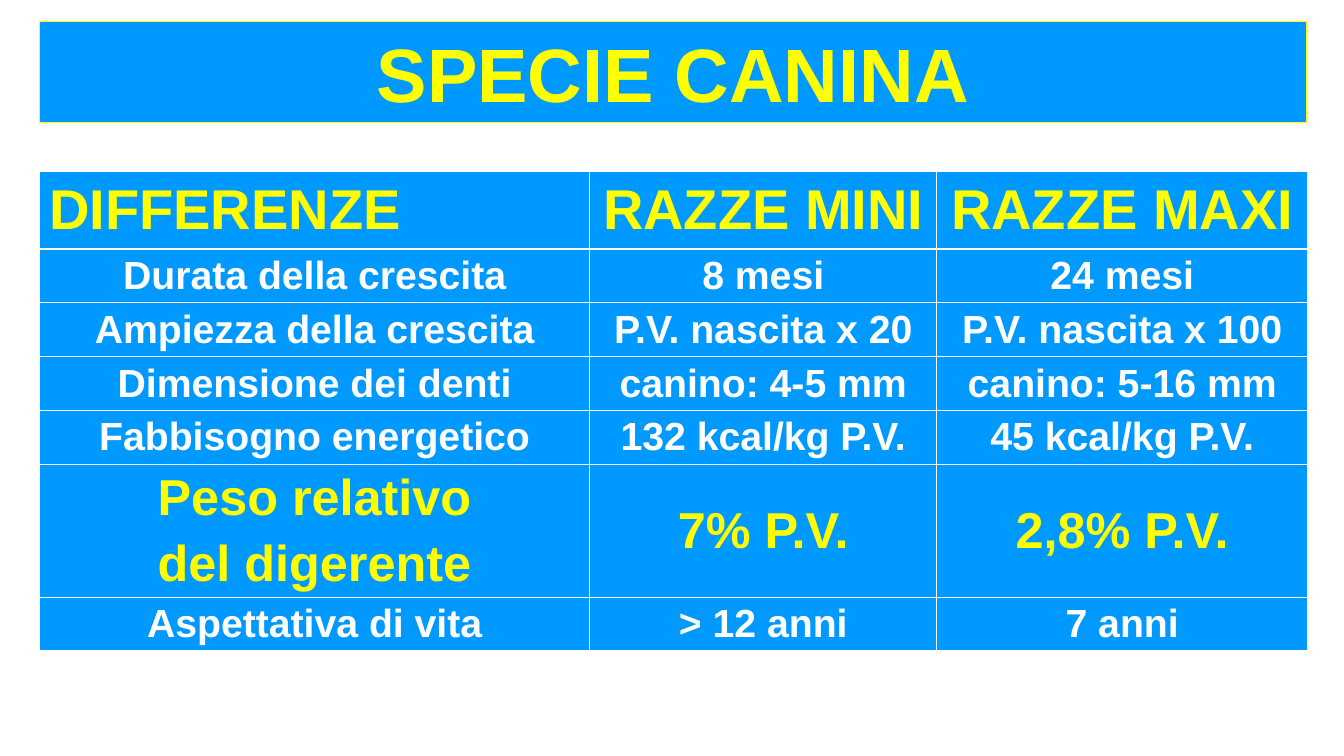
"""Build a slide comparing small and large dog breeds in a table."""
from lxml import etree
from pptx import Presentation
from pptx.dml.color import RGBColor
from pptx.enum import text
from pptx.oxml import ns
from pptx.util import Inches, Pt

BLUE = RGBColor(0x00, 0x99, 0xFF)
YELLOW = RGBColor(0xFF, 0xFF, 0x00)
WHITE = RGBColor(0xFF, 0xFF, 0xFF)
LEFT, WIDTH = Inches(0.39), Inches(12.57)
COLUMN_WIDTHS = (5.46, 3.44, 3.68)
HEADER = {"height": 0.77, "size": 40, "color": YELLOW, "anchor": text.MSO_ANCHOR.MIDDLE}
PLAIN = {"height": 0.53, "size": 28, "color": WHITE, "anchor": text.MSO_ANCHOR.TOP}
KEY = {"height": 1.32, "size": 36, "color": YELLOW, "anchor": text.MSO_ANCHOR.MIDDLE}
ROWS = [
    (HEADER, ("DIFFERENZE", "RAZZE MINI", "RAZZE MAXI")),
    (PLAIN, ("Durata della crescita", "8 mesi", "24 mesi")),
    (PLAIN, ("Ampiezza della crescita", "P.V. nascita x 20", "P.V. nascita x 100")),
    (PLAIN, ("Dimensione dei denti", "canino: 4-5 mm", "canino: 5-16 mm")),
    (PLAIN, ("Fabbisogno energetico", "132 kcal/kg P.V.", "45 kcal/kg P.V.")),
    (KEY, ("Peso relativo\ndel digerente", "7% P.V.", "2,8% P.V.")),
    (PLAIN, ("Aspettativa di vita", "> 12 anni", "7 anni")),
]


def format_paragraph(para, size, color, align):
    para.alignment = align
    for name, value in {"name": "Arial", "size": Pt(size), "bold": True}.items():
        for span in para.runs:
            setattr(span.font, name, value)
    for span in para.runs:
        span.font.color.rgb = color


def add_borders(cell):
    properties = cell._tc.get_or_add_tcPr()
    for side in ("lnL", "lnR", "lnT", "lnB"):
        line = etree.SubElement(properties, ns.qn(f"a:{side}"), w=str(Pt(1)))
        fill = etree.SubElement(line, ns.qn("a:solidFill"))
        etree.SubElement(fill, ns.qn("a:srgbClr"), val=str(WHITE))


deck = Presentation()
deck.slide_width, deck.slide_height = Inches(13.33), Inches(7.5)
page = deck.slides.add_slide(deck.slide_layouts[5])

title = page.shapes.title
bounds = {"left": LEFT, "top": Inches(0.21), "width": WIDTH, "height": Inches(1.01)}
for name, value in bounds.items():
    setattr(title, name, value)
title.fill.solid()
title.fill.fore_color.rgb = BLUE
title.line.color.rgb = YELLOW
title.line.width = Pt(0.75)
title.text_frame.text = "SPECIE CANINA"
title.text_frame.auto_size = text.MSO_AUTO_SIZE.NONE
title.text_frame.vertical_anchor = text.MSO_ANCHOR.MIDDLE
format_paragraph(title.text_frame.paragraphs[0], 54, YELLOW, text.PP_ALIGN.CENTER)

table_height = Inches(sum(style["height"] for style, _ in ROWS))
table = page.shapes.add_table(
    len(ROWS), len(COLUMN_WIDTHS), LEFT, Inches(1.7), WIDTH, table_height
).table
for column, width in zip(table.columns, COLUMN_WIDTHS):
    column.width = Inches(width)

for row_index, (style, values) in enumerate(ROWS):
    table.rows[row_index].height = Inches(style["height"])
    for column_index, value in enumerate(values):
        cell = table.cell(row_index, column_index)
        add_borders(cell)
        cell.fill.solid()
        cell.fill.fore_color.rgb = BLUE
        cell.vertical_anchor = style["anchor"]
        cell.text_frame.text = value
        is_corner = row_index == column_index == 0
        align = text.PP_ALIGN.LEFT if is_corner else text.PP_ALIGN.CENTER
        for para_index, para in enumerate(cell.text_frame.paragraphs):
            format_paragraph(para, style["size"], style["color"], align)
            if para_index:
                para.space_before = Pt(7)

deck.save("out.pptx")
